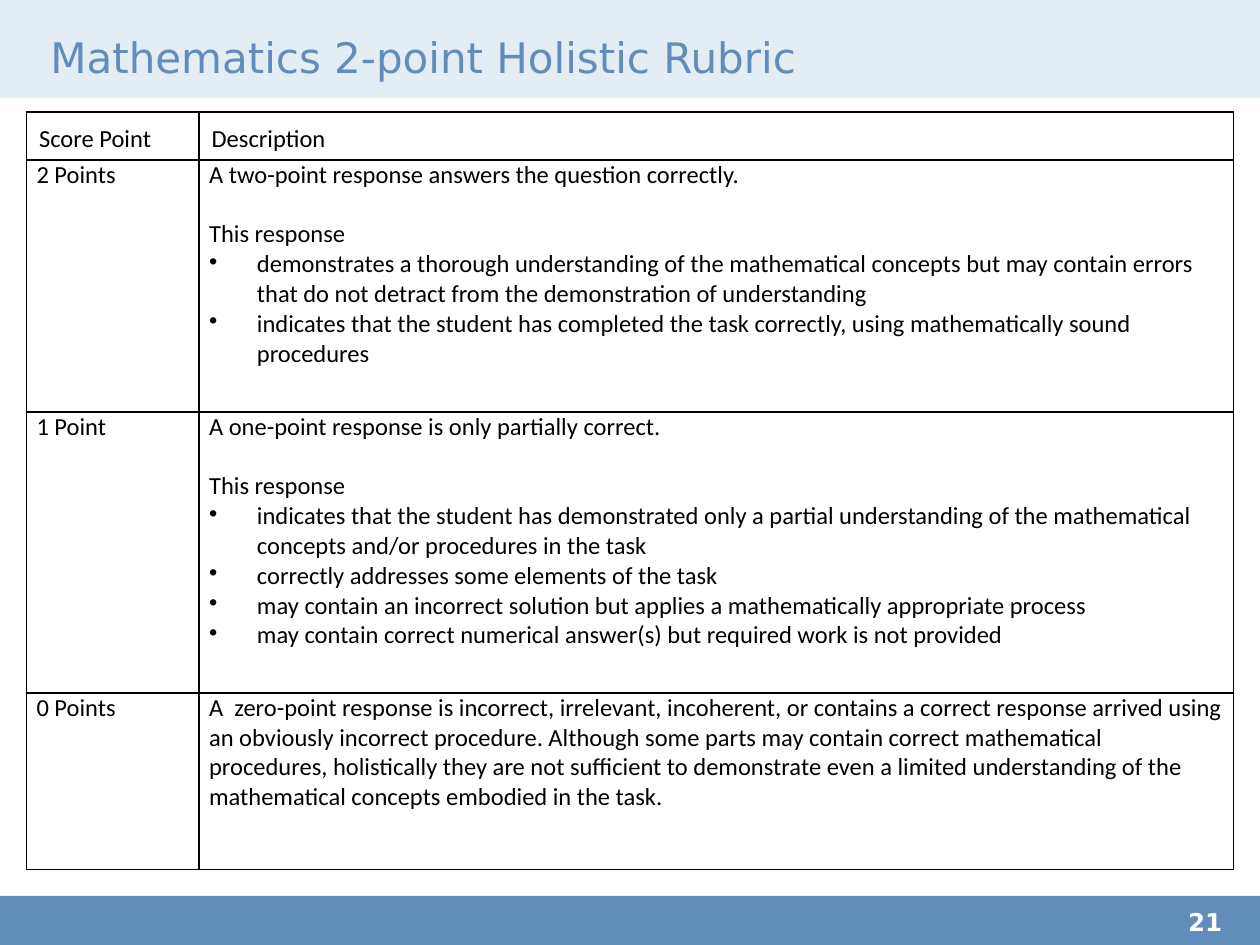
from pptx import Presentation
from pptx.dml.color import RGBColor
from pptx.enum.shapes import MSO_SHAPE as Shape
from pptx.enum.text import MSO_ANCHOR as Anchor
from pptx.oxml import parse_xml
from pptx.oxml.ns import nsdecls
from pptx.util import Inches, Pt

BLUE, PALE, WHITE, BLACK = "628DBB", "E3EDF4", "FFFFFF", "000000"
HEAD, BODY = "DejaVu Sans", "Calibri"
SIZE = 14
LINE = 17  # height of one line of body text, in points

COLS = [1.37, 8.21]
ROWS = [0.38, 2, 2.23, 1.4]

# Score, opening sentence, bullets
SCORES = [
    ("2 Points", "A two-point response answers the question correctly.", [
        "demonstrates a thorough understanding of the mathematical concepts "
        "but may contain errors that do not detract from the demonstration "
        "of understanding",
        "indicates that the student has completed the task correctly, using "
        "mathematically sound procedures",
    ]),
    ("1 Point", "A one-point response is only partially correct.", [
        "indicates that the student has demonstrated only a partial "
        "understanding of the mathematical concepts and/or procedures in "
        "the task",
        "correctly addresses some elements of the task",
        "may contain an incorrect solution but applies a mathematically "
        "appropriate process",
        "may contain correct numerical answer(s) but required work is not "
        "provided",
    ]),
    ("0 Points",
     "A  zero-point response is incorrect, irrelevant, incoherent, or "
     "contains a correct response arrived using an obviously incorrect "
     "procedure. Although some parts may contain correct mathematical "
     "procedures, holistically they are not sufficient to demonstrate even "
     "a limited understanding of the mathematical concepts embodied in the "
     "task.", []),
]


def color(code):
    return RGBColor.from_string(code)


def add_run(para, text, font=BODY, size=SIZE, tint=BLACK, bold=False):
    run = para.add_run()
    run.text = text
    run.font.name, run.font.size = font, Pt(size)
    run.font.bold = bold
    run.font.color.rgb = color(tint)


def inset(part, left, top, right, bottom):
    part.margin_left, part.margin_top = Inches(left), Inches(top)
    part.margin_right, part.margin_bottom = Inches(right), Inches(bottom)


def add_band(slide, x, y, w, h, fill):
    band = slide.shapes.add_shape(
        Shape.RECTANGLE, Inches(x), Inches(y), Inches(w), Inches(h))
    band.shadow.inherit = False
    band.fill.solid()
    band.fill.fore_color.rgb = color(fill)
    band.line.fill.background()


def add_label(slide, x, y, w, h, text, size, tint, bold=False,
              anchor=Anchor.TOP):
    box = slide.shapes.add_textbox(Inches(x), Inches(y), Inches(w), Inches(h))
    frame = box.text_frame
    frame.word_wrap = True
    frame.vertical_anchor = anchor
    inset(frame, 0, 0, 0, 0)
    add_run(frame.paragraphs[0], text, HEAD, size, tint, bold)


def add_header(slide, x, y, w, h):
    add_band(slide, x, y, w, h, PALE)
    add_label(slide, x + 0.4, y + 0.23, w - 1, 0.44,
              "Mathematics 2-point Holistic Rubric", 24, BLUE,
              anchor=Anchor.MIDDLE)


def add_footer(slide, x, y, w, h):
    add_band(slide, x, y, w, h, BLUE)
    add_label(slide, x + w - 0.57, y + 0.09, 0.57, 0.3, "21", SIZE, WHITE,
              bold=True)


def style_cell(cell):
    cell.fill.background()
    props = cell._tc.get_or_add_tcPr()
    for spot, side in enumerate("LRTB"):
        props.insert(spot, parse_xml(
            f'<a:ln{side} {nsdecls("a")} w="12700"><a:solidFill>'
            f'<a:srgbClr val="{BLACK}"/></a:solidFill></a:ln{side}>'))


def add_bullet(para, text):
    props = para._p.get_or_add_pPr()
    indent = Inches(0.38)
    props.set("marL", str(indent))
    props.set("indent", str(-indent))
    props.append(parse_xml(f'<a:buChar {nsdecls("a")} char="•"/>'))
    props.append(parse_xml(
        f'<a:tabLst {nsdecls("a")}><a:tab pos="{Inches(0.5)}" algn="l"/>'
        '</a:tabLst>'))
    add_run(para, text)


def fill_score(label, detail, score, lead, points):
    for cell in (label, detail):
        inset(cell, 0.08, 0, 0.08, 0)
        cell.vertical_anchor = Anchor.TOP
    add_run(label.text_frame.paragraphs[0], score)
    frame = detail.text_frame
    add_run(frame.paragraphs[0], lead)
    if points:
        intro = frame.add_paragraph()
        intro.space_before = Pt(LINE)
        add_run(intro, "This response")
    for point in points:
        add_bullet(frame.add_paragraph(), point)


def add_rubric(slide, x, y, w, h):
    table = slide.shapes.add_table(
        len(ROWS), len(COLS), Inches(x), Inches(y), Inches(w), Inches(h)).table
    table.first_row = table.horz_banding = False
    for col, width in zip(table.columns, COLS):
        col.width = Inches(width)
    for row, height in zip(table.rows, ROWS):
        row.height = Inches(height)
    for cell in table.iter_cells():
        style_cell(cell)

    # Heading row
    for cell, text in zip(table.rows[0].cells, ["Score Point", "Description"]):
        inset(cell, 0.1, 0.05, 0.1, 0.05)
        cell.vertical_anchor = Anchor.BOTTOM
        add_run(cell.text_frame.paragraphs[0], text)

    # One row for each score
    for num, score in enumerate(SCORES, 1):
        fill_score(table.cell(num, 0), table.cell(num, 1), *score)


def main():
    deck = Presentation()
    deck.slide_width, deck.slide_height = Inches(10), Inches(7.5)
    slide = deck.slides.add_slide(deck.slide_layouts[6])
    add_header(slide, 0, 0, 10, 0.78)
    add_rubric(slide, 0.21, 0.89, sum(COLS), sum(ROWS))
    add_footer(slide, 0, 7.11, 10, 0.39)
    deck.save("out.pptx")


if __name__ == "__main__":
    main()
